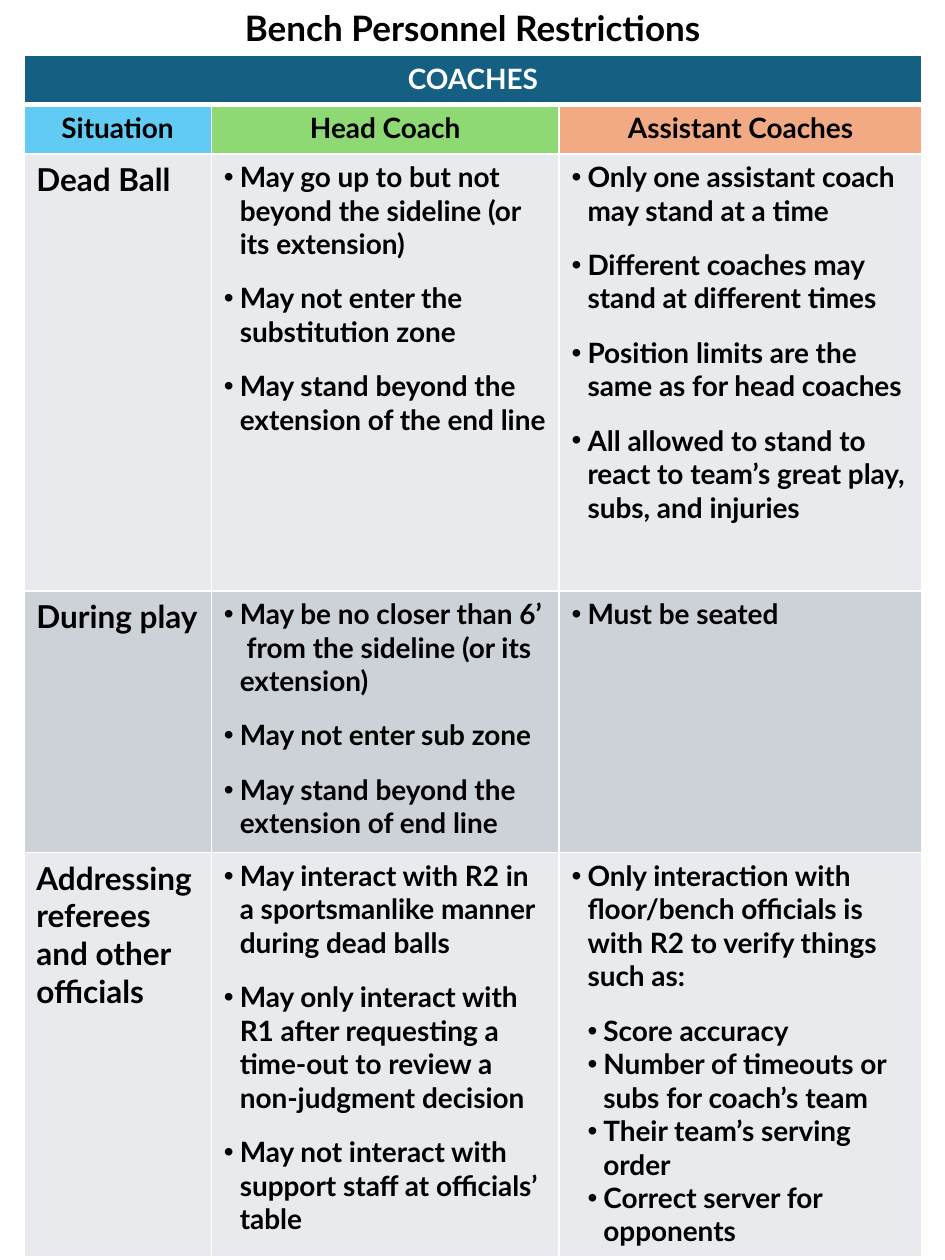
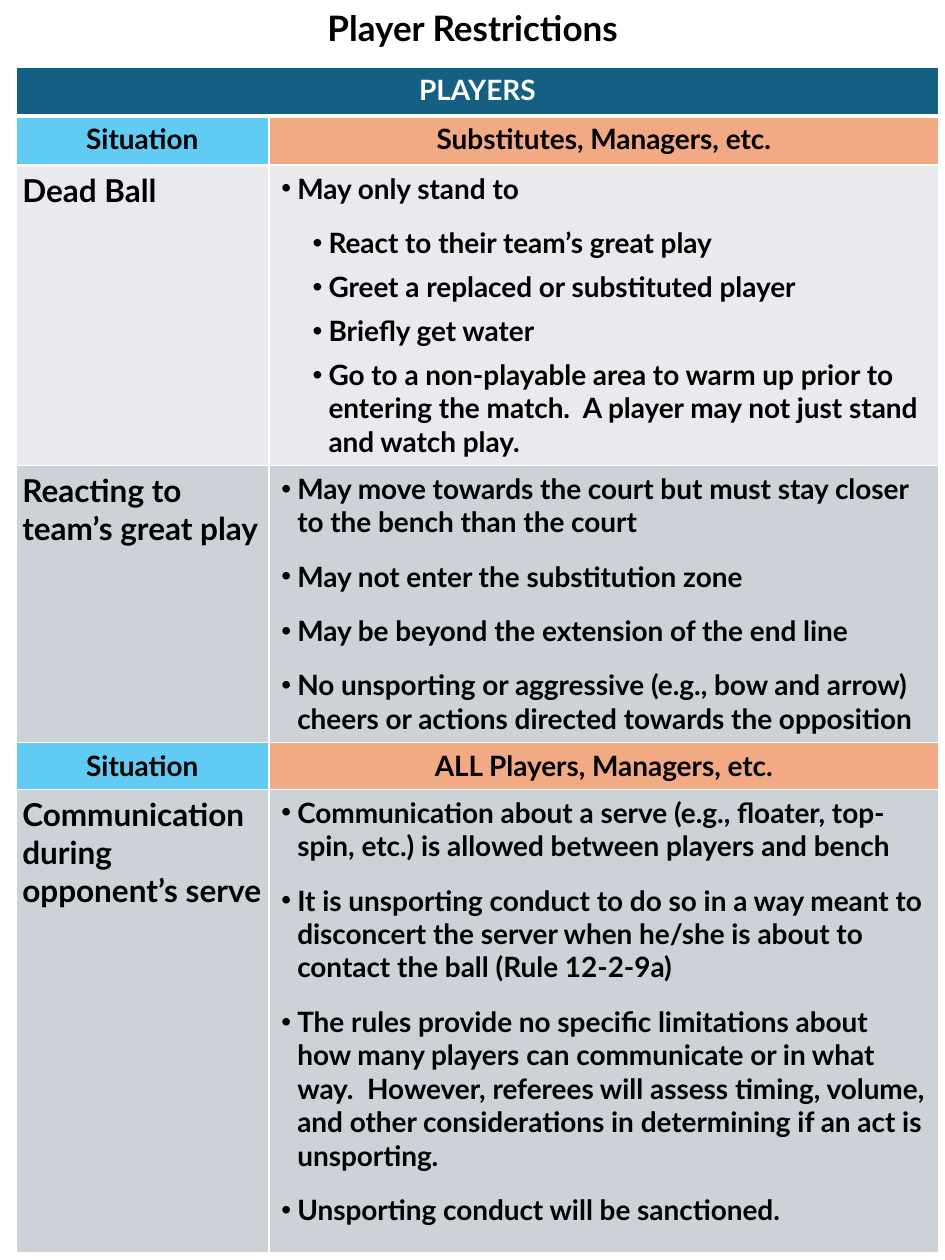
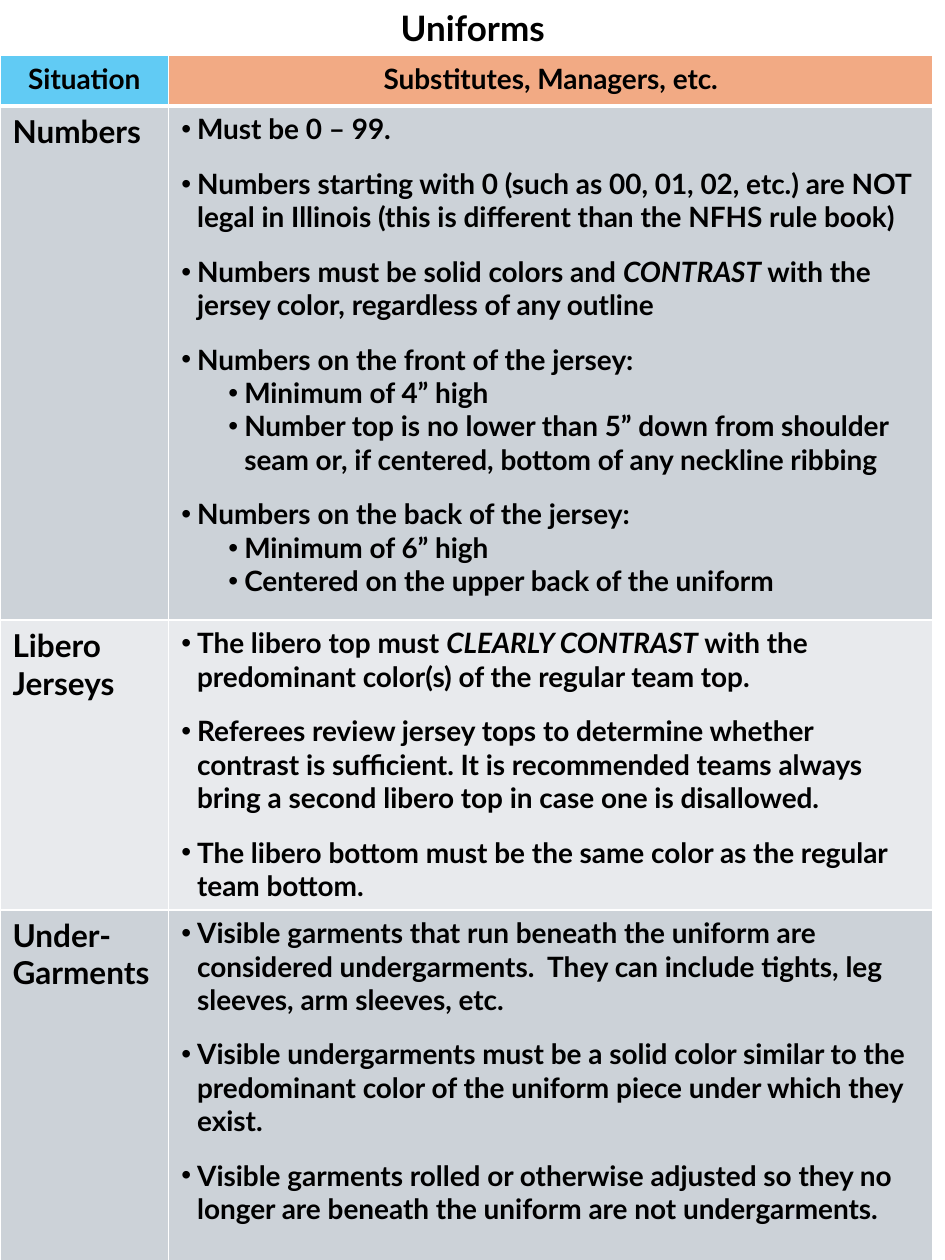
from dataclasses import dataclass

from pptx import Presentation
from pptx.dml.color import RGBColor
from pptx.enum.text import MSO_AUTO_SIZE, MSO_ANCHOR, PP_ALIGN
from pptx.oxml.ns import qn
from pptx.util import Cm, Pt
from lxml.etree import SubElement

# Shared look
BLACK = RGBColor(0x00, 0x00, 0x00)
WHITE = RGBColor(0xFF, 0xFF, 0xFF)
BAND_BLUE = RGBColor(0x15, 0x60, 0x82)
SITUATION_BLUE = RGBColor(0x61, 0xCB, 0xF4)
HEAD_COACH_GREEN = RGBColor(0x8E, 0xD9, 0x73)
PERSONNEL_ORANGE = RGBColor(0xF2, 0xAA, 0x84)
ROW_LIGHT = RGBColor(0xE8, 0xEA, 0xED)
ROW_DARK = RGBColor(0xCC, 0xD2, 0xD8)

FONT = "Lato"
TITLE_FORMAT = {"name": FONT, "size": Pt(20), "bold": True}
SITUATION_FORMAT = {"name": FONT, "size": Pt(18), "bold": True}
TEXT_FORMAT = {"name": FONT, "size": Pt(16), "bold": True}
TITLE_HEIGHT = Cm(1.12)
HANGING = Cm(0.32)


@dataclass
class Bullet:
    """A list entry; text between asterisks is italic."""
    text: str
    indent: float = 0.32
    after: int = 12
    level: int = 0


def lead(text):
    return Bullet(text, after=0)


def sub(text, indent, after=0):
    return Bullet(text, indent, after, level=1)


def set_format(target, values):
    for name, value in values.items():
        setattr(target, name, value)


def add_run(paragraph, text, values, color=BLACK):
    run = paragraph.add_run()
    run.text = text
    set_format(run.font, values)
    run.font.color.rgb = color
    return run


def add_title(slide, text, width):
    title = slide.shapes.title
    set_format(title, {"left": Cm(9.53) - Cm(width) // 2, "top": 0,
                       "width": Cm(width), "height": TITLE_HEIGHT})
    set_format(title.text_frame, {"word_wrap": False,
                                  "auto_size": MSO_AUTO_SIZE.SHAPE_TO_FIT_TEXT,
                                  "vertical_anchor": MSO_ANCHOR.TOP})
    paragraph = title.text_frame.paragraphs[0]
    paragraph.alignment = PP_ALIGN.CENTER
    add_run(paragraph, text, TITLE_FORMAT)


# Table cells
def set_borders(cell, top, bottom):
    properties = cell._tc.get_or_add_tcPr()
    for side, points in (("L", 1), ("R", 1), ("T", top), ("B", bottom)):
        line = SubElement(properties, qn(f"a:ln{side}"), w=str(Pt(points)))
        fill = SubElement(line, qn("a:solidFill"))
        SubElement(fill, qn("a:srgbClr"), val=str(WHITE))


def set_fill(cell, color):
    cell.fill.solid()
    cell.fill.fore_color.rgb = color


def fill_heading(cell, text, fill, color=BLACK):
    set_fill(cell, fill)
    paragraph = cell.text_frame.paragraphs[0]
    paragraph.alignment = PP_ALIGN.CENTER
    add_run(paragraph, text, TEXT_FORMAT, color)


def cell_paragraphs(cell, count):
    frame = cell.text_frame
    return [frame.paragraphs[0]] + [frame.add_paragraph() for _ in range(count - 1)]


def fill_situation(cell, text):
    lines = text.split("\n")
    for paragraph, line in zip(cell_paragraphs(cell, len(lines)), lines):
        add_run(paragraph, line, SITUATION_FORMAT)


def fill_bullets(cell, entries):
    bullets = [Bullet(entry) if isinstance(entry, str) else entry for entry in entries]
    for paragraph, bullet in zip(cell_paragraphs(cell, len(bullets)), bullets):
        set_format(paragraph, {"level": bullet.level, "space_after": Pt(bullet.after)})
        properties = paragraph._p.get_or_add_pPr()
        properties.set("marL", str(Cm(bullet.indent)))
        properties.set("indent", str(-HANGING))
        SubElement(properties, qn("a:buFont"), typeface="Arial")
        SubElement(properties, qn("a:buChar"), char="•")
        for index, part in enumerate(bullet.text.split("*")):
            run = add_run(paragraph, part, TEXT_FORMAT)
            if index % 2:
                run.font.italic = True


# Table rows
def fill_band(cells, text):
    cells[0].merge(cells[-1])
    fill_heading(cells[0], text, BAND_BLUE, WHITE)


def fill_headers(cells, names):
    fills = [SITUATION_BLUE] + [HEAD_COACH_GREEN] * (len(cells) - 2) + [PERSONNEL_ORANGE]
    for cell, name, fill in zip(cells, names, fills):
        fill_heading(cell, name, fill)


def fill_rules(cells, situation, *lists, fill):
    for cell in cells:
        set_fill(cell, fill)
    fill_situation(cells[0], situation)
    for cell, entries in zip(cells[1:], lists):
        fill_bullets(cell, entries)


def add_rule_table(slide, left, top, widths, rows, narrow_first=False):
    """Each row is (height, content): a band text, a list of headers or a tuple of rules."""
    heights = [height for height, _ in rows]
    table = slide.shapes.add_table(len(rows), len(widths), Cm(left), Cm(top),
                                   Cm(sum(widths)), Cm(sum(heights))).table
    set_format(table, {"first_row": False, "horz_banding": False})
    for column, width in zip(table.columns, widths):
        column.width = Cm(width)
    for index, (height, content) in enumerate(rows):
        table.rows[index].height = Cm(height)
        cells = [table.cell(index, column) for column in range(len(widths))]
        for cell in cells:
            set_borders(cell, top=3 if index == 1 else 1, bottom=3 if index == 0 else 1)
        if narrow_first:
            set_format(cells[0], {"margin_left": Cm(0.13), "margin_right": Cm(0.13)})
        if isinstance(content, str):
            fill_band(cells, content)
        elif isinstance(content, list):
            fill_headers(cells, content)
        else:
            fill_rules(cells, *content, fill=ROW_DARK if index % 2 else ROW_LIGHT)


# Content
COACH_ROWS = [
    (0.99, "COACHES"),
    (0.99, ["Situation", "Head Coach", "Assistant Coaches"]),
    (8.81, ("Dead Ball", [
        "May go up to but not beyond the sideline (or its extension)",
        "May not enter the substitution zone",
        "May stand beyond the extension of the end line",
    ], [
        "Only one assistant coach may stand at a time",
        "Different coaches may stand at different times",
        "Position limits are the same as for head coaches",
        "All allowed to stand to react to team’s great play, subs, and injuries",
    ])),
    (5.28, ("During play", [
        "May be no closer than 6’  from the sideline (or its extension)",
        "May not enter sub zone",
        "May stand beyond the extension of end line",
    ], ["Must be seated"])),
    (8.15, ("Addressing referees and other officials", [
        "May interact with R2 in a sportsmanlike manner during dead balls",
        "May only interact with R1 after requesting a time-out to review a "
        "non-judgment decision",
        "May not interact with support staff at officials’ table",
    ], [
        "Only interaction with floor/bench officials is with R2 to verify things such as:",
        sub("Score accuracy", 0.64),
        sub("Number of timeouts or subs for coach’s team", 0.64),
        sub("Their team’s serving order", 0.64),
        sub("Correct server for opponents", 0.64),
    ])),
]

PLAYER_ROWS = [
    (0.99, "PLAYERS"),
    (0.99, ["Situation", "Substitutes, Managers, etc."]),
    (6.05, ("Dead Ball", [
        "May only stand to",
        sub("React to their team’s great play", 0.95, 6),
        sub("Greet a replaced or substituted player", 0.95, 6),
        sub("Briefly get water", 0.95, 6),
        sub("Go to a non-playable area to warm up prior to entering the match.  "
            "A player may not just stand and watch play.", 0.95, 6),
    ])),
    (5.59, ("Reacting to team’s great play", [
        "May move towards the court but must stay closer to the bench than the court",
        "May not enter the substitution zone",
        "May be beyond the extension of the end line",
        "No unsporting or aggressive (e.g., bow and arrow) cheers or actions directed "
        "towards the opposition",
    ])),
    (0.94, ["Situation", "ALL Players, Managers, etc."]),
    (9.35, ("Communication during opponent’s serve", [
        "Communication about a serve (e.g., floater, top-spin, etc.) is allowed between "
        "players and bench",
        "It is unsporting conduct to do so in a way meant to disconcert the server when "
        "he/she is about to contact the ball (Rule 12-2-9a)",
        "The rules provide no specific limitations about how many players can communicate "
        "or in what way.  However, referees will assess timing, volume, and other "
        "considerations in determining if an act is unsporting.",
        "Unsporting conduct will be sanctioned.",
    ])),
]

UNIFORM_ROWS = [
    (1.02, ["Situation", "Substitutes, Managers, etc."]),
    (10.36, ("Numbers", [
        "Must be 0 – 99.",
        "Numbers starting with 0 (such as 00, 01, 02, etc.) are NOT legal in Illinois "
        "(this is different than the NFHS rule book)",
        "Numbers must be solid colors and *CONTRAST* with the jersey color, regardless "
        "of any outline",
        lead("Numbers on the front of the jersey:"),
        sub("Minimum of 4” high", 1.27),
        sub("Number top is no lower than 5” down from shoulder seam or, if centered, "
            "bottom of any neckline ribbing", 1.27, 12),
        lead("Numbers on the back of the jersey:"),
        sub("Minimum of 6” high", 1.27),
        sub("Centered on the upper back of the uniform", 1.27),
    ])),
    (5.84, ("Libero Jerseys", [
        "The libero top must *CLEARLY CONTRAST* with the predominant color(s) of the "
        "regular team top.",
        "Referees review jersey tops to determine whether contrast is sufficient. It is "
        "recommended teams always bring a second libero top in case one is disallowed.",
        "The libero bottom must be the same color as the regular team bottom.",
    ])),
    (7.11, ("Under-\nGarments", [
        "Visible garments that run beneath the uniform are considered undergarments.  "
        "They can include tights, leg sleeves, arm sleeves, etc.",
        "Visible undergarments must be a solid color similar to the predominant color of "
        "the uniform piece under which they exist.",
        "Visible garments rolled or otherwise adjusted so they no longer are beneath the "
        "uniform are not undergarments.",
    ])),
]


def add_rule_slide(presentation, title, title_width, **table):
    slide = presentation.slides.add_slide(presentation.slide_layouts[5])
    add_title(slide, title, title_width)
    add_rule_table(slide, **table)


def main():
    presentation = Presentation()
    set_format(presentation, {"slide_width": Cm(19.05), "slide_height": Cm(25.4)})
    add_rule_slide(presentation, "Bench Personnel Restrictions", 10.08,
                   left=0.48, top=1.12, widths=[3.78, 7.01, 7.32], rows=COACH_ROWS)
    add_rule_slide(presentation, "Player Restrictions", 6.65,
                   left=0.32, top=1.35, widths=[5.1, 13.51], rows=PLAYER_ROWS,
                   narrow_first=True)
    add_rule_slide(presentation, "Uniforms", 3.53,
                   left=0, top=1.12, widths=[3.4, 15.41], rows=UNIFORM_ROWS)
    presentation.save("out.pptx")


if __name__ == "__main__":
    main()
